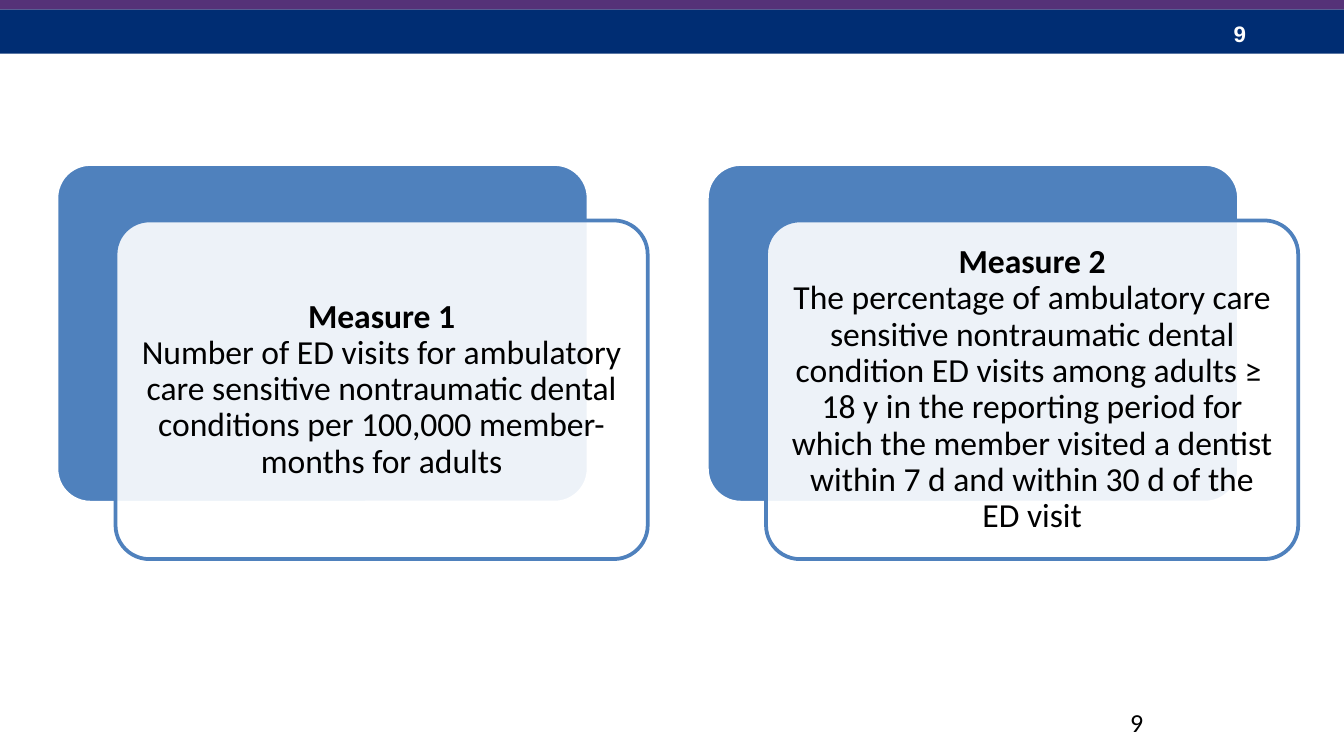
"""Builds a slide with two layered cards that define the dental ED visit measures."""
from dataclasses import dataclass

from lxml.etree import SubElement
from pptx import Presentation
from pptx.dml.color import RGBColor as RGB
from pptx.enum.shapes import MSO_SHAPE as SHAPE
from pptx.enum.text import MSO_ANCHOR as ANCHOR, PP_ALIGN as ALIGN
from pptx.oxml.ns import qn
from pptx.util import Inches, Pt


@dataclass(frozen=True)
class Theme:
    """Colours, fonts and type sizes of the slide."""
    navy: str = "002D73"
    purple: str = "553278"
    blue: str = "4F81BD"
    white: str = "FFFFFF"
    black: str = "000000"
    body_font: str = "Calibri"
    header_font: str = "Arial"
    body_size: float = 18
    header_size: float = 12
    footer_size: float = 13.9
    outline: float = 2


THEME = Theme()
WIDTH = 10
HEIGHT = WIDTH * 9 / 16
GRID_LEFT, GRID_TOP, COLUMN_STEP = 0.42, 1.22, 4.84
CARD_W, CARD_H = 3.96, 2.52
LAYER_SHIFT = (0.44, 0.42)
TEXT_INSET = 0.07
THIN_SPACE, HARD_SPACE = chr(8201), chr(160)
MEASURES = [
    ("Measure 1",
     "Number of ED visits for ambulatory care sensitive nontraumatic dental "
     "conditions per 100,000 member-months for adults"),
    ("Measure 2",
     "The percentage of ambulatory care sensitive nontraumatic dental "
     f"condition ED visits among adults ≥{THIN_SPACE}18 y in the reporting "
     "period for which the member visited a dentist within 7 d and within "
     f"30 d of the ED{HARD_SPACE}visit"),
]


def add_box(s, kind, x, y, w, h, fill, line=None, opacity=None):
    """Add a filled shape, optionally outlined and translucent."""
    sp = s.shapes.add_shape(kind, Inches(x), Inches(y), Inches(w), Inches(h))
    sp.shadow.inherit = False
    sp.fill.solid()
    sp.fill.fore_color.rgb = RGB.from_string(fill)
    if line:
        sp.line.color.rgb = RGB.from_string(line)
        sp.line.width = Pt(THEME.outline)
    else:
        sp.line.fill.background()
    if opacity is not None:
        color = sp.fill._xPr.find(qn("a:solidFill"))[0]
        SubElement(color, qn("a:alpha"), val=str(opacity * 1000))
    return sp


def add_text(s, x, y, w, h):
    """Add a wrapping text box and return its text frame."""
    tf = s.shapes.add_textbox(Inches(x), Inches(y), Inches(w), Inches(h)).text_frame
    tf.word_wrap = True
    return tf


def add_run(p, text, size, font, color, bold=False):
    """Append one styled run to a paragraph."""
    r = p.add_run()
    r.text = text
    r.font.size, r.font.name, r.font.bold = Pt(size), font, bold
    r.font.color.rgb = RGB.from_string(color)


def add_header(s, number):
    """Draw the header bands and the page number inside them."""
    add_box(s, SHAPE.RECTANGLE, 0, 0.07, WIDTH, 0.33, THEME.navy)
    tf = add_text(s, 9.08, 0.1, 0.75, 0.3)
    add_run(tf.paragraphs[0], number, THEME.header_size, THEME.header_font,
            THEME.white, bold=True)
    add_box(s, SHAPE.RECTANGLE, 0, 0, WIDTH, 0.07, THEME.purple)


def add_footer(s, number):
    """Write the page number at the foot of the slide."""
    p = add_text(s, 8.31, 5.21, 1.19, 0.3).paragraphs[0]
    add_run(p, number, THEME.footer_size, THEME.body_font, THEME.black)


def add_measure(s, column, title, definition):
    """Draw one measure as a back card, a translucent front card and its text."""
    x, y = GRID_LEFT + column * COLUMN_STEP, GRID_TOP
    front_x, front_y = x + LAYER_SHIFT[0], y + LAYER_SHIFT[1]
    back = add_box(s, SHAPE.ROUNDED_RECTANGLE, x, y, CARD_W, CARD_H,
                   THEME.blue, THEME.white)
    front = add_box(s, SHAPE.ROUNDED_RECTANGLE, front_x, front_y, CARD_W, CARD_H,
                    THEME.white, THEME.blue, opacity=90)
    for sp in (back, front):
        sp.adjustments[0] = 0.1

    tf = add_text(s, front_x + TEXT_INSET, front_y + TEXT_INSET,
                  CARD_W - 2 * TEXT_INSET, CARD_H - 2 * TEXT_INSET)
    tf.vertical_anchor = ANCHOR.MIDDLE
    tf.margin_left = tf.margin_right = Inches(TEXT_INSET)
    tf.margin_top = tf.margin_bottom = Inches(TEXT_INSET)
    p = tf.paragraphs[0]
    p.alignment, p.line_spacing = ALIGN.CENTER, 0.9
    style = (THEME.body_size, THEME.body_font, THEME.black)
    add_run(p, title, *style, bold=True)
    p.add_line_break()
    add_run(p, definition, *style)


def main():
    """Build and save the slide."""
    prs = Presentation()
    prs.slide_width, prs.slide_height = Inches(WIDTH), Inches(HEIGHT)
    s = prs.slides.add_slide(prs.slide_layouts[6])
    add_header(s, "9")
    add_footer(s, "9")
    for column, (title, definition) in enumerate(MEASURES):
        add_measure(s, column, title, definition)
    prs.save("out.pptx")


if __name__ == "__main__":
    main()
